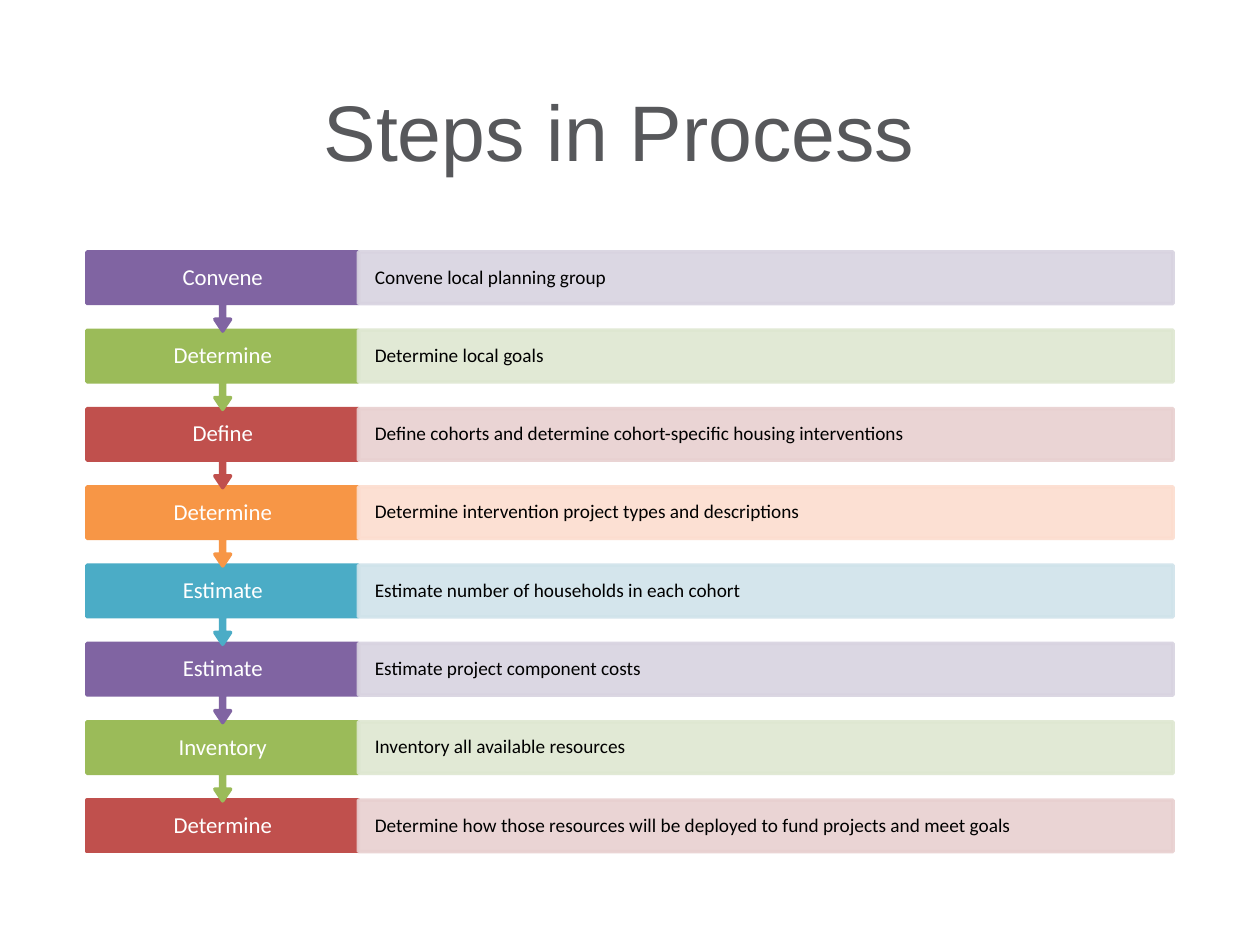
import pptx
import pptx.util
import pptx.dml.color
import pptx.enum.shapes
import pptx.enum.text
import pptx.oxml.ns
import lxml.etree
from dataclasses import dataclass

Inches = pptx.util.Inches
Pt = pptx.util.Pt
Kind = pptx.enum.shapes.MSO_SHAPE
Align = pptx.enum.text.PP_ALIGN
Anchor = pptx.enum.text.MSO_ANCHOR


@dataclass(frozen=True)
class Theme:
    title = dict(name="Arial", size=45, color="57585B", bold=False)
    label = dict(name="Calibri", size=13, color="FFFFFF")
    note = dict(name="Calibri", size=11, color="000000")
    # strong colour and its pale tint, used in turn
    pairs = (("8064A2", "D8D3E0"), ("9BBB59", "DEE7D1"),
             ("C0504D", "E8D0D0"), ("F79646", "FCDDCF"),
             ("4BACC6", "D0E3EA"))
    border = 2
    tint = 90


class Deck:
    # Grid in inches: four columns, with one row for each step
    left, top, col, row = 0.69, 2, 8.62 / 4, 4.35 / 7

    def __init__(self, theme):
        self.theme = theme
        self.file = pptx.Presentation()
        self.file.slide_width = Inches(10)
        self.file.slide_height = Inches(7.5)
        self.slide = self.file.slides.add_slide(self.file.slide_layouts[5])

    def cell(self, col, row, wide, high):
        return [Inches(v) for v in (self.left + col * self.col,
                                    self.top + row * self.row,
                                    wide * self.col, high * self.row)]

    def words(self, shape, text, style, align, pad, anchor=Anchor.MIDDLE,
              space=0.9):
        frame = shape.text_frame
        sides = ("margin_left", "margin_top", "margin_right", "margin_bottom")
        form = dict(zip(sides, map(Inches, pad)))
        form.update(word_wrap=True, vertical_anchor=anchor,
                    auto_size=pptx.enum.text.MSO_AUTO_SIZE.NONE)
        for key, value in form.items():
            setattr(frame, key, value)
        para = frame.paragraphs[0]
        para.alignment = align
        para.line_spacing = space
        run = para.add_run()
        run.text = text
        for key, value in style.items():
            if key == "color":
                run.font.color.rgb = pptx.dml.color.RGBColor.from_string(value)
            else:
                setattr(run.font, key, Pt(value) if key == "size" else value)

    def title(self, text):
        shape = self.slide.shapes.title
        box = dict(left=self.left, top=0.61, width=4 * self.col, height=1.24)
        for key, value in box.items():
            setattr(shape, key, Inches(value))
        self.words(shape, text, self.theme.title, Align.CENTER,
                   (0, 0.05, 0, 0), Anchor.TOP, 1.0)

    def block(self, kind, place, color, alpha=100):
        shape = self.slide.shapes.add_shape(kind, *self.cell(*place))
        shape.shadow.inherit = False
        shape.line.width = Pt(self.theme.border)
        for fill in (shape.fill, shape.line.fill):
            fill.solid()
            fill.fore_color.rgb = pptx.dml.color.RGBColor.from_string(color)
        if alpha < 100:
            tag = pptx.oxml.ns.qn("a:alpha")
            for node in shape._element.spPr.iter(pptx.oxml.ns.qn("a:srgbClr")):
                lxml.etree.SubElement(node, tag).set("val", str(alpha * 1000))
        return shape

    def arrow(self, place, color):
        shape = self.block(Kind.UP_ARROW_CALLOUT, place, color)
        shape.rotation = 180
        for i, value in enumerate((0.05, 0.1, 0.15, 0.65)):
            shape.adjustments[i] = value

    def label(self, place, text):
        shape = self.slide.shapes.add_textbox(*self.cell(*place))
        self.words(shape, text, self.theme.label, Align.CENTER,
                   (0.15, 0.1, 0.15, 0.1))

    def note(self, place, text, color):
        shape = self.block(Kind.RECTANGLE, place, color, self.theme.tint)
        self.words(shape, text, self.theme.note, Align.LEFT,
                   (0.13, 0.15, 0.13, 0.15))

    def step(self, row, verb, text, last):
        strong, pale = self.theme.pairs[row % len(self.theme.pairs)]
        high = 0.66
        if last:
            self.block(Kind.RECTANGLE, (0, row, 1, high), strong)
        else:
            self.arrow((0, row, 1, 1.01), strong)
        self.label((0, row, 1, high), verb)
        self.note((1, row, 3, high), text, pale)


STEPS = (
    ("Convene", "Convene local planning group"),
    ("Determine", "Determine local goals"),
    ("Define", "Define cohorts and determine cohort-specific housing "
               "interventions"),
    ("Determine", "Determine intervention project types and descriptions"),
    ("Estimate", "Estimate number of households in each cohort"),
    ("Estimate", "Estimate project component costs"),
    ("Inventory", "Inventory all available resources"),
    ("Determine", "Determine how those resources will be deployed to fund "
                  "projects and meet goals"),
)


def main():
    deck = Deck(Theme())
    deck.title("Steps in Process ")
    # Last step first, so each arrow tip lies over the step below
    for row, (verb, text) in reversed(list(enumerate(STEPS))):
        deck.step(row, verb, text, row == len(STEPS) - 1)
    deck.file.save("out.pptx")


if __name__ == "__main__":
    main()
